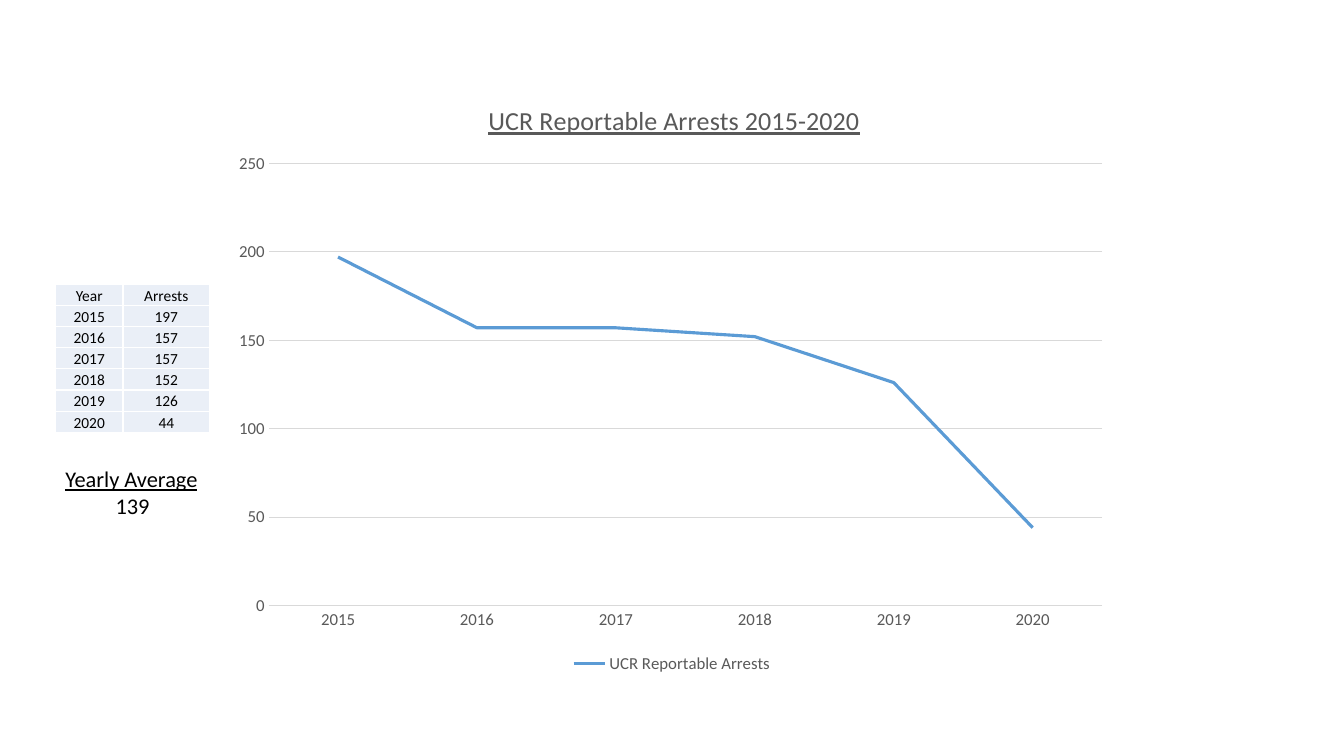
import pptx
import pptx.chart.data
import pptx.dml.color
import pptx.enum.chart
import pptx.enum.text
import pptx.oxml
import pptx.oxml.ns
import pptx.util

PX = 9144  # EMU per px, 100 px to the inch

BLACK = pptx.dml.color.RGBColor(0x00, 0x00, 0x00)
GRAY = pptx.dml.color.RGBColor(0x59, 0x59, 0x59)
GRID_GRAY = pptx.dml.color.RGBColor(0xD9, 0xD9, 0xD9)
LINE_BLUE = pptx.dml.color.RGBColor(0x5B, 0x9B, 0xD5)
CELL_BLUE = pptx.dml.color.RGBColor(0xEA, 0xEF, 0xF7)
CENTER = pptx.enum.text.PP_ALIGN.CENTER

ARRESTS = {"2015": 197, "2016": 157, "2017": 157, "2018": 152, "2019": 126, "2020": 44}


def write(paragraph, text, size=16, color=BLACK, underline=False, align=CENTER):
    paragraph.alignment = align
    run = paragraph.add_run()
    run.text = text
    run.font.name = "Calibri"
    run.font.size = pptx.util.Pt(size)
    run.font.color.rgb = color
    run.font.bold = False
    run.font.underline = underline


def set_layout(parent, index, **fractions):
    for old_layout in parent.findall(pptx.oxml.ns.qn("c:layout")):
        parent.remove(old_layout)
    target = '<c:layoutTarget val="inner"/>' if "w" in fractions else ""
    modes = "".join(f'<c:{key}Mode val="edge"/>' for key in "xy")
    values = "".join(f'<c:{key} val="{value}"/>' for key, value in fractions.items())
    parent.insert(index, pptx.oxml.parse_xml(
        f'<c:layout {pptx.oxml.ns.nsdecls("c")}><c:manualLayout>'
        f"{target}{modes}{values}</c:manualLayout></c:layout>"))


presentation = pptx.Presentation()
presentation.slide_width = 1333 * PX
presentation.slide_height = 750 * PX
slide = presentation.slides.add_slide(presentation.slide_layouts[6])

# Line chart
chart_data = pptx.chart.data.CategoryChartData()
chart_data.categories = list(ARRESTS)
chart_data.add_series("UCR Reportable Arrests", list(ARRESTS.values()))
chart = slide.shapes.add_chart(
    pptx.enum.chart.XL_CHART_TYPE.LINE,
    222 * PX, 79 * PX, 889 * PX, 593 * PX, chart_data).chart
chart.font.name = "Calibri"
chart.font.size = pptx.util.Pt(12)
chart.font.color.rgb = GRAY

chart.has_title = True
write(chart.chart_title.text_frame.paragraphs[0], "UCR Reportable Arrests 2015-2020",
      size=18.6, color=GRAY, underline=True)
chart.chart_title.include_in_layout = False
set_layout(chart.chart_title._element, 1, x=0.29, y=0.03)
set_layout(chart.plots[0]._element.getparent(), 0, x=0.05, y=0.14, w=0.93, h=0.74)

chart.has_legend = True
chart.legend.position = pptx.enum.chart.XL_LEGEND_POSITION.BOTTOM
chart.legend.include_in_layout = False

chart.plots[0].vary_by_categories = False
series = chart.plots[0].series[0]
series.smooth = False
series.format.line.color.rgb = LINE_BLUE
series.format.line.width = pptx.util.Pt(2.25)

# Axes
value_axis = chart.value_axis
value_axis.minimum_scale = 0
value_axis.maximum_scale = 250
value_axis.major_unit = 50
value_axis.has_major_gridlines = True
value_axis.format.line.fill.background()
for line in (value_axis.major_gridlines.format.line, chart.category_axis.format.line):
    line.color.rgb = GRID_GRAY
    line.width = pptx.util.Pt(0.75)
for axis in (value_axis, chart.category_axis):
    axis.major_tick_mark = pptx.enum.chart.XL_TICK_MARK.NONE
    axis.minor_tick_mark = pptx.enum.chart.XL_TICK_MARK.NONE

# Table of arrests by year
rows = [("Year", "Arrests"), *ARRESTS.items()]
table = slide.shapes.add_table(
    len(rows), 2, 55 * PX, 282 * PX, 153 * PX, 21 * len(rows) * PX).table
for column, width in zip(table.columns, (67, 86)):
    column.width = width * PX
for row, values in zip(table.rows, rows):
    row.height = 21 * PX
    for cell, value in zip(row.cells, values):
        cell.margin_left = cell.margin_right = cell.margin_top = PX
        cell.margin_bottom = 0
        cell.vertical_anchor = pptx.enum.text.MSO_ANCHOR.BOTTOM
        write(cell.text_frame.paragraphs[0], str(value), size=11)
        for side in ("lnL", "lnR", "lnT", "lnB"):
            cell._tc.get_or_add_tcPr().append(pptx.oxml.parse_xml(
                f'<a:{side} {pptx.oxml.ns.nsdecls("a")} w="12700"><a:solidFill>'
                f'<a:srgbClr val="FFFFFF"/></a:solidFill></a:{side}>'))
        cell.fill.solid()
        cell.fill.fore_color.rgb = CELL_BLUE

# Yearly average
average_frame = slide.shapes.add_textbox(55 * PX, 457 * PX, 153 * PX, 94 * PX).text_frame
average_frame.word_wrap = True
write(average_frame.paragraphs[0], "Yearly Average", underline=True,
      align=pptx.enum.text.PP_ALIGN.LEFT)
write(average_frame.add_paragraph(), "139")

presentation.save("out.pptx")
